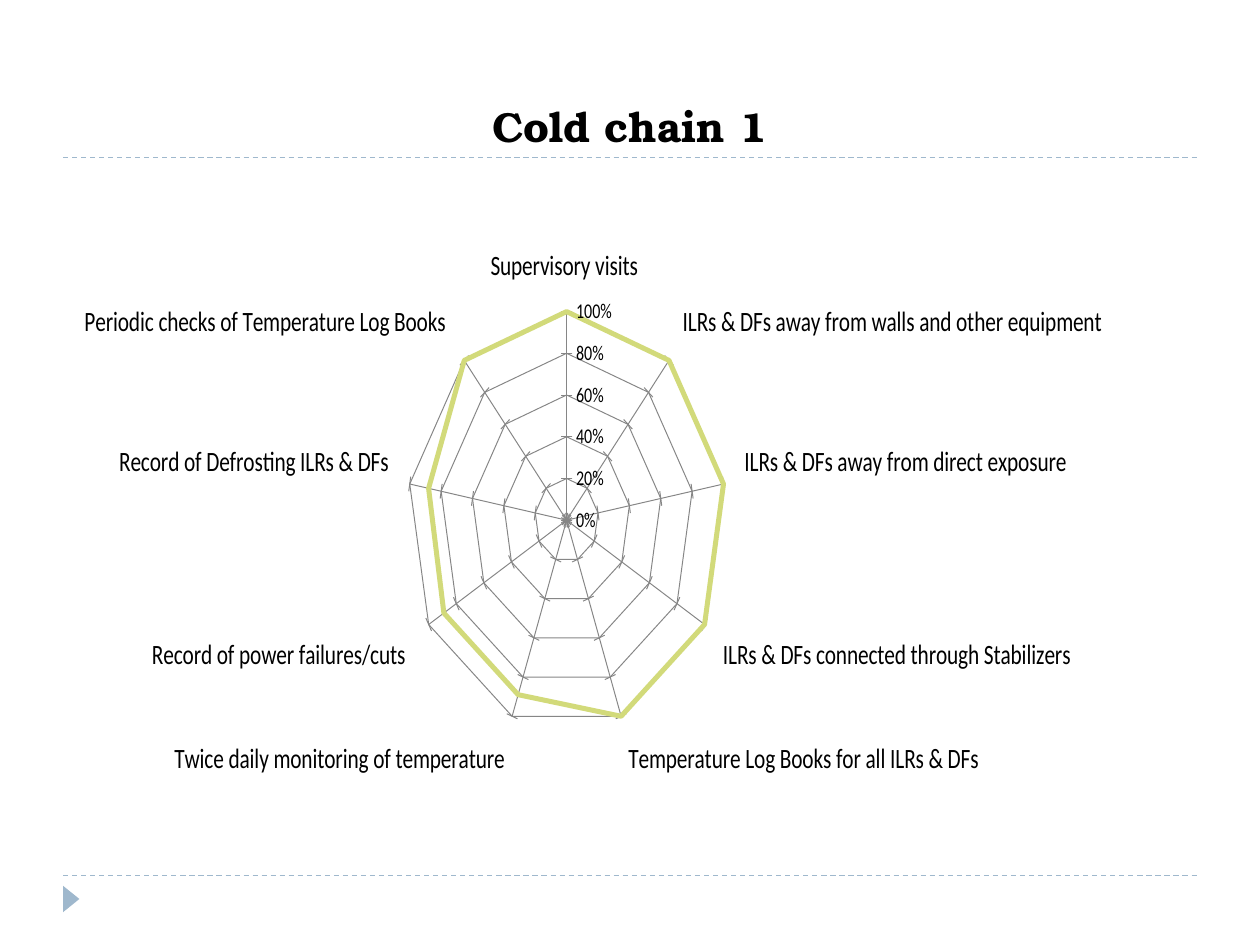
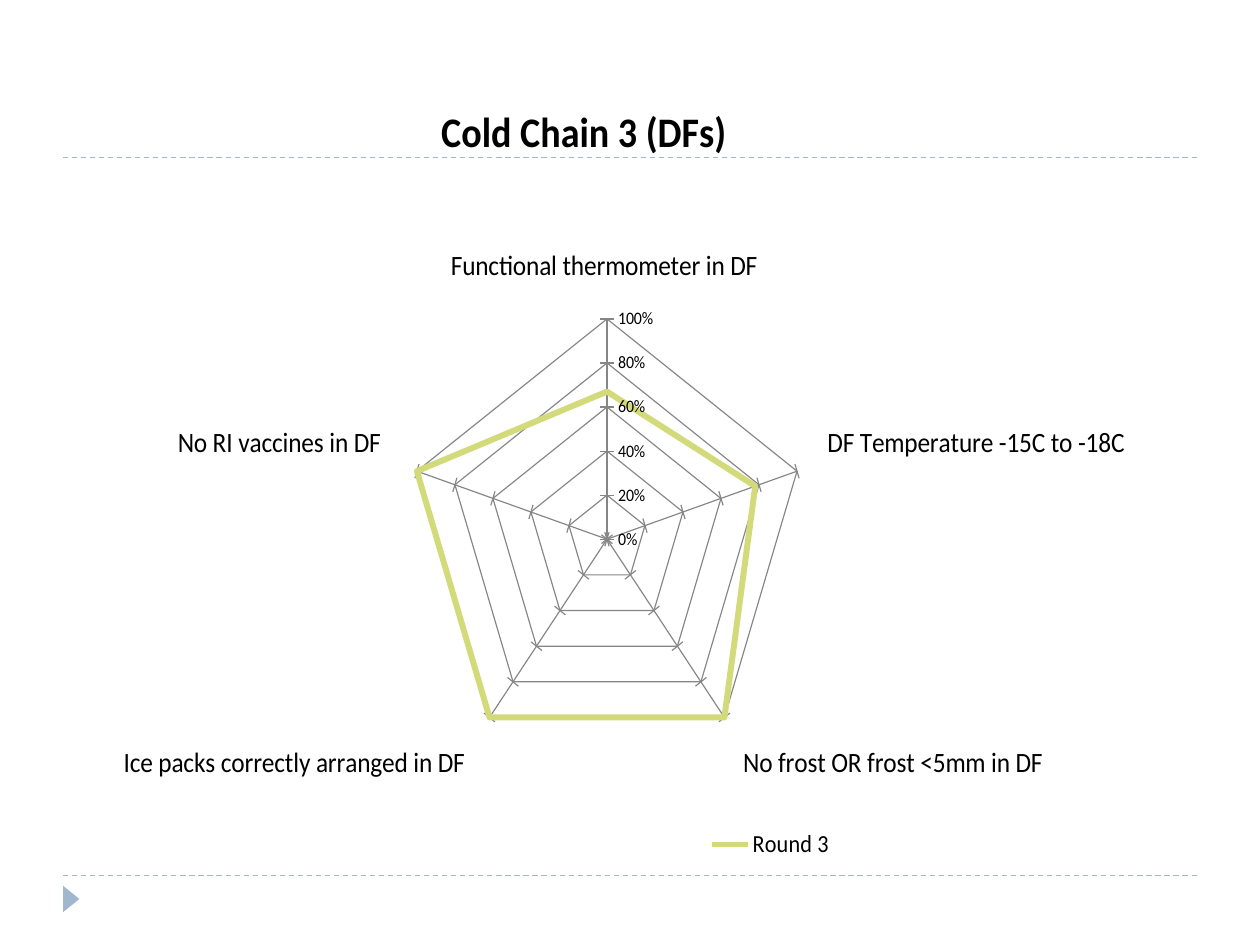
from lxml import etree
from pptx import Presentation
from pptx.chart.data import CategoryChartData
from pptx.dml.color import RGBColor
from pptx.enum.chart import XL_CHART_TYPE, XL_LEGEND_POSITION, XL_TICK_MARK
from pptx.enum.dml import MSO_LINE
from pptx.enum.shapes import MSO_CONNECTOR, MSO_SHAPE
from pptx.enum.text import MSO_ANCHOR, PP_ALIGN
from pptx.oxml.ns import qn
from pptx.util import Inches, Pt

RADAR = XL_CHART_TYPE.RADAR
LEGEND_RIGHT = XL_LEGEND_POSITION.RIGHT
CROSS = XL_TICK_MARK.CROSS
DASH = MSO_LINE.DASH
STRAIGHT = MSO_CONNECTOR.STRAIGHT
TRIANGLE = MSO_SHAPE.ISOSCELES_TRIANGLE
BOTTOM = MSO_ANCHOR.BOTTOM
CENTER = PP_ALIGN.CENTER

WIDTH, HEIGHT = Inches(10), Inches(7.5)
COLUMNS, ROWS = 100, 75
COLORS = {
    "ink": "000000",
    "band": "9FB8CD",
    "slate": "727CA3",
    "lime": "D2DA7A",
    "grid": "868686",
}
BODY_FONT = "Calibri"
TITLE_FONT = "TeX Gyre Bonum"

STORAGE_CHECKS = [
    "Supervisory visits ",
    "ILRs & DFs away from walls and other equipment",
    "ILRs & DFs away from direct exposure",
    "ILRs & DFs connected through Stabilizers",
    "Temperature Log Books for all ILRs & DFs",
    "Twice daily monitoring of temperature",
    "Record of power failures/cuts ",
    "Record of Defrosting ILRs & DFs",
    "Periodic checks of Temperature Log Books ",
]
STORAGE_ROUNDS = [
    ("Series 1", [0] * 9, "slate"),
    ("Series 2", [0] * 9, "band"),
    ("Series 3", [1, 1, 1, 1, 1, 0.89, 0.89, 0.88, 1], "lime"),
]
FREEZER_CHECKS = [
    "Functional thermometer in DF ",
    "DF Temperature -15C to -18C",
    "No frost OR frost <5mm in DF",
    "Ice packs correctly arranged in DF ",
    "No RI vaccines in DF ",
]
FREEZER_ROUNDS = [("Round 3", [0.67, 0.78, 1, 1, 1], "lime")]


def rgb(name):
    return RGBColor.from_string(COLORS[name])


def style_font(font, size, color="ink", name=BODY_FONT, bold=False):
    font.size = Pt(size)
    font.name = name
    font.bold = bold
    font.color.rgb = rgb(color)


def write_text(frame, text, align=None, **style):
    para = frame.paragraphs[0]
    if align is not None:
        para.alignment = align
    span = para.add_run()
    span.text = text
    style_font(span.font, **style)


def place_part(element, index, target=None, **shares):
    for old in element.findall(qn("c:layout")):
        element.remove(old)
    layout = etree.Element(qn("c:layout"))
    manual = etree.SubElement(layout, qn("c:manualLayout"))
    settings = {"layoutTarget": target} if target else {}
    settings.update(xMode="edge", yMode="edge", **shares)
    for tag, value in settings.items():
        etree.SubElement(manual, qn(f"c:{tag}")).set("val", str(value))
    element.insert(index, layout)


class Page:
    def __init__(self, deck):
        self.slide = deck.slides.add_slide(deck.slide_layouts[6])
        self.shapes = self.slide.shapes

    def area(self, left, top, width, height):
        column, row = WIDTH / COLUMNS, HEIGHT / ROWS
        return (round(left * column), round(top * row),
                round(width * column), round(height * row))

    def rule(self, row):
        left, top, width, _ = self.area(5, row, 90, 0)
        line = self.shapes.add_connector(STRAIGHT, left, top, left + width, top)
        line.line.color.rgb = rgb("band")
        line.line.width = Pt(0.75)
        line.line.dash_style = DASH
        etree.SubElement(line._element.spPr, qn("a:effectLst"))

    def marker(self):
        box = self.shapes.add_shape(TRIANGLE, *self.area(4.6, 70.7, 2.1, 1.3))
        box.rotation = 90
        box.shadow.inherit = False
        box.fill.solid()
        box.fill.fore_color.rgb = rgb("band")
        box.line.fill.background()

    def frame(self):
        for row in (69.5, 12.5):
            self.rule(row)
        self.marker()

    def title(self, text):
        box = self.shapes.add_textbox(*self.area(5, 1.7, 90, 10.8))
        box.text_frame.word_wrap = True
        box.text_frame.vertical_anchor = BOTTOM
        write_text(box.text_frame, text, align=CENTER, size=24,
                   name=TITLE_FONT, bold=True)

    def radar(self, area, checks, rounds, plot, scale_size):
        data = CategoryChartData(number_format="0%")
        data.categories = checks
        for name, values, _ in rounds:
            data.add_series(name, values)
        chart = self.shapes.add_chart(RADAR, *self.area(*area), data).chart
        style_font(chart.font, 10)
        chart.has_title = False
        chart.has_legend = False
        for series, (_, _, color) in zip(chart.plots[0].series, rounds):
            series.smooth = False
            series.format.line.color.rgb = rgb(color)
            series.format.line.width = Pt(3.75)
        self.axes(chart, scale_size)
        plot_area = chart._chartSpace.chart.plotArea
        place_part(plot_area, 0, "inner", **dict(zip("xywh", plot)))
        return chart

    def axes(self, chart, scale_size):
        for axis, size in ((chart.category_axis, 16),
                           (chart.value_axis, scale_size)):
            axis.has_major_gridlines = True
            axis.major_tick_mark = CROSS
            style_font(axis.tick_labels.font, size)
            for line in (axis.format.line, axis.major_gridlines.format.line):
                line.color.rgb = rgb("grid")
                line.width = Pt(0.75)
        scale = chart.value_axis
        scale.minimum_scale, scale.maximum_scale = 0, 1
        scale.major_unit = 0.2
        scale.tick_labels.number_format = "0%"
        scale.tick_labels.number_format_is_linked = False

    def chart_title(self, chart, text, x, y):
        chart.has_title = True
        title = chart.chart_title
        write_text(title.text_frame, text, size=24, bold=True)
        title.include_in_layout = False
        place_part(title._element, 1, x=x, y=y)

    def legend(self, chart, x, y):
        chart.has_legend = True
        legend = chart.legend
        legend.position = LEGEND_RIGHT
        legend.include_in_layout = False
        style_font(legend.font, 14)
        place_part(legend._element, 1, x=x, y=y, w=0.16, h=0.06)


def main():
    deck = Presentation()
    deck.slide_width, deck.slide_height = WIDTH, HEIGHT

    storage = Page(deck)
    storage.frame()
    storage.title("Cold chain 1")
    storage.radar((6.7, 11.7, 81.1, 54.3), STORAGE_CHECKS, STORAGE_ROUNDS,
                  plot=(0.28, 0.24, 0.44, 0.61), scale_size=12)

    freezer = Page(deck)
    freezer.frame()
    chart = freezer.radar((9.8, 7.6, 79.5, 64.6), FREEZER_CHECKS,
                          FREEZER_ROUNDS, plot=(0.29, 0.22, 0.44, 0.65),
                          scale_size=10)
    freezer.chart_title(chart, "Cold Chain 3 (DFs) ", x=0.32, y=0)
    freezer.legend(chart, x=0.61, y=0.89)

    deck.save("out.pptx")


if __name__ == "__main__":
    main()
